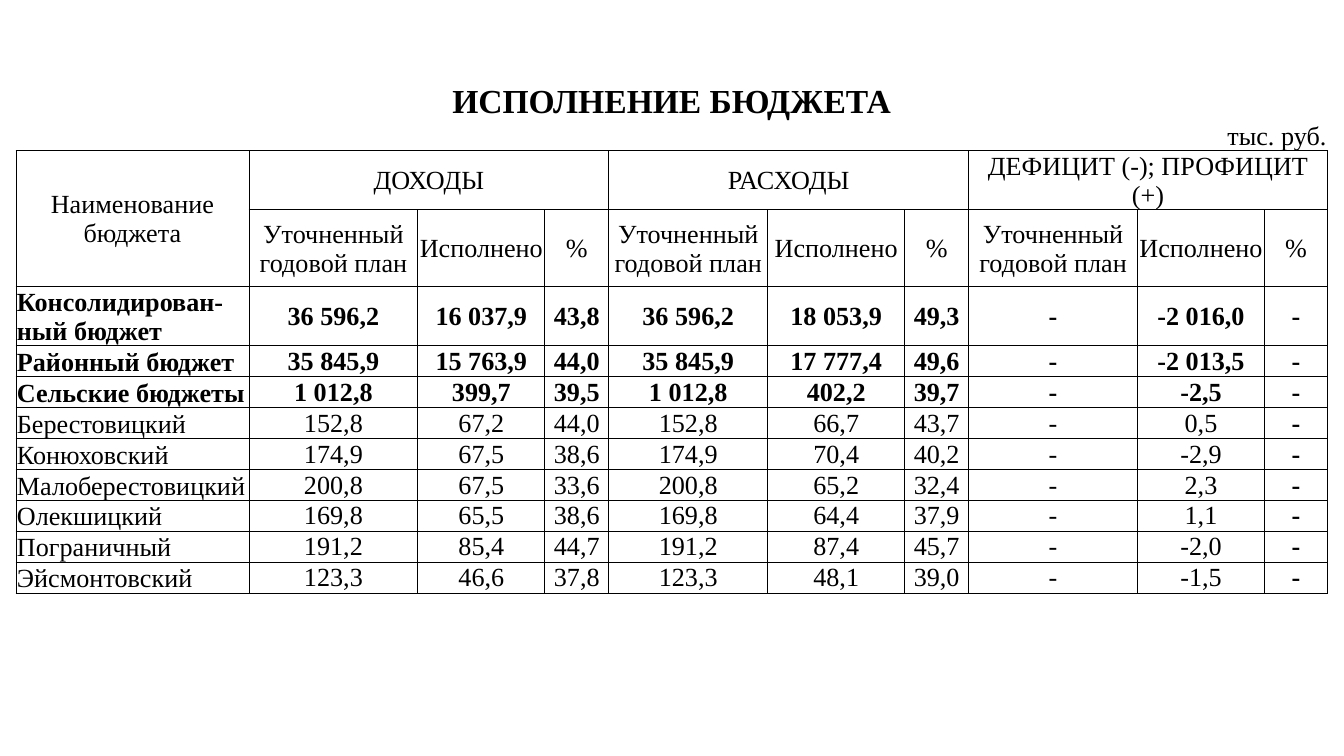
from lxml.etree import SubElement
from pptx import Presentation
from pptx.dml.color import RGBColor
from pptx.enum.text import MSO_ANCHOR, PP_ALIGN
from pptx.oxml.ns import qn
from pptx.util import Pt

PX = 914400 / 134.4
FONT = "Times New Roman"
BLACK = "000000"


def set_borders(cell, sides):
    """Draw black hairlines on the given sides (L, R, T, B) and none on the others."""
    properties = cell._tc.get_or_add_tcPr()
    for index, side in enumerate("LRTB"):
        line = SubElement(properties, qn(f"a:ln{side}"), w=str(Pt(0.5)))
        properties.insert(index, line)
        if side in sides:
            fill = SubElement(line, qn("a:solidFill"))
            SubElement(fill, qn("a:srgbClr"), val=BLACK)
        else:
            SubElement(line, qn("a:noFill"))


def write(cell, text, align=PP_ALIGN.CENTER, anchor=MSO_ANCHOR.MIDDLE, bold=False, size=14):
    cell.text_frame.text = text
    cell.vertical_anchor = anchor
    for para in cell.text_frame.paragraphs:
        para.alignment = align
        for span in para.runs:
            span.font.name = FONT
            span.font.size = Pt(size)
            span.font.bold = bold
            span.font.color.rgb = RGBColor.from_string(BLACK)


column_widths = [233, 136, 33, 87, 40, 64, 159, 28, 109, 12, 52, 169, 70, 57, 63]
row_heights = [39, 29, 59, 77, 59] + [31] * 8

# First and last grid column of each visible cell
unit_spans = [(0, 0), (1, 1), (2, 3), (4, 5), (6, 7), (8, 9), (10, 10), (11, 12), (13, 14)]
group_spans = [(1, 5), (6, 10), (11, 14)]
data_spans = [(0, 0), (1, 2), (3, 4), (5, 5), (6, 6), (7, 8), (9, 10), (11, 11), (12, 13), (14, 14)]

groups = ["ДОХОДЫ", "РАСХОДЫ", "ДЕФИЦИТ (-); ПРОФИЦИТ (+)"]
measures = ["Уточненный годовой план", "Исполнено", "%"]
budgets = [
    ["Консолидирован-ный бюджет", "36 596,2", "16 037,9", "43,8", "36 596,2", "18 053,9", "49,3", "-2 016,0"],
    ["Районный бюджет", "35 845,9", "15 763,9", "44,0", "35 845,9", "17 777,4", "49,6", "-2 013,5"],
    ["Сельские бюджеты", "1 012,8", "399,7", "39,5", "1 012,8", "402,2", "39,7", "-2,5"],
    ["Берестовицкий", "152,8", "67,2", "44,0", "152,8", "66,7", "43,7", "0,5"],
    ["Конюховский", "174,9", "67,5", "38,6", "174,9", "70,4", "40,2", "-2,9"],
    ["Малоберестовицкий", "200,8", "67,5", "33,6", "200,8", "65,2", "32,4", "2,3"],
    ["Олекшицкий", "169,8", "65,5", "38,6", "169,8", "64,4", "37,9", "1,1"],
    ["Пограничный", "191,2", "85,4", "44,7", "191,2", "87,4", "45,7", "-2,0"],
    ["Эйсмонтовский", "123,3", "46,6", "37,8", "123,3", "48,1", "39,0", "-1,5"],
]
TOTAL_ROWS = 3
FIRST_DATA_ROW = 4

deck = Presentation()
deck.slide_width = round(1344 * PX)
deck.slide_height = round(756 * PX)
page = deck.slides.add_slide(deck.slide_layouts[6])

frame = page.shapes.add_table(
    len(row_heights), len(column_widths),
    round(16 * PX), round(82 * PX),
    round(sum(column_widths) * PX), round(sum(row_heights) * PX),
)
table = frame.table
table.first_row = False
table.horz_banding = False
for column, width in zip(table.columns, column_widths):
    column.width = round(width * PX)
for row, height in zip(table.rows, row_heights):
    row.height = round(height * PX)

# Cell basics: no fill, tight margins, grid lines below the two heading rows
for row_index, row in enumerate(table.rows):
    for cell in row.cells:
        cell.fill.background()
        cell.margin_left = cell.margin_right = cell.margin_top = round(PX)
        cell.margin_bottom = round(PX) if row_index >= FIRST_DATA_ROW else 0
        set_borders(cell, ["", "B"][row_index] if row_index < 2 else "LRTB")
        # Small type keeps empty cells from stretching their row
        SubElement(cell.text_frame.paragraphs[0]._p, qn("a:endParaRPr"), sz="1000")

# Merged cells
row_spans = [[(0, 14)], unit_spans, group_spans] + [data_spans] * 10
for row_index, spans in enumerate(row_spans):
    for first, last in spans:
        if last > first:
            table.cell(row_index, first).merge(table.cell(row_index, last))
table.cell(2, 0).merge(table.cell(3, 0))

# Title, unit and column headings
write(table.cell(0, 0), "ИСПОЛНЕНИЕ БЮДЖЕТА", bold=True, size=18)
write(table.cell(1, 13), "тыс. руб.", PP_ALIGN.RIGHT, MSO_ANCHOR.BOTTOM)
write(table.cell(2, 0), "Наименование\nбюджета")
for (first, _), group in zip(group_spans, groups):
    write(table.cell(2, first), group)
for (first, _), measure in zip(data_spans[1:], measures * len(groups)):
    write(table.cell(3, first), measure)

# Budget rows; the balance has neither a plan nor a percentage
for index, (name, *values, balance) in enumerate(budgets):
    row_index = FIRST_DATA_ROW + index
    is_total = index < TOTAL_ROWS
    name_cell = table.cell(row_index, 0)
    name_cell.margin_bottom = 0
    write(name_cell, name, PP_ALIGN.LEFT, MSO_ANCHOR.BOTTOM, is_total)
    for (first, last), value in zip(data_spans[1:], [*values, "-", balance, "-"]):
        write(table.cell(row_index, first), value, bold=is_total or last == 14)

deck.save("out.pptx")
